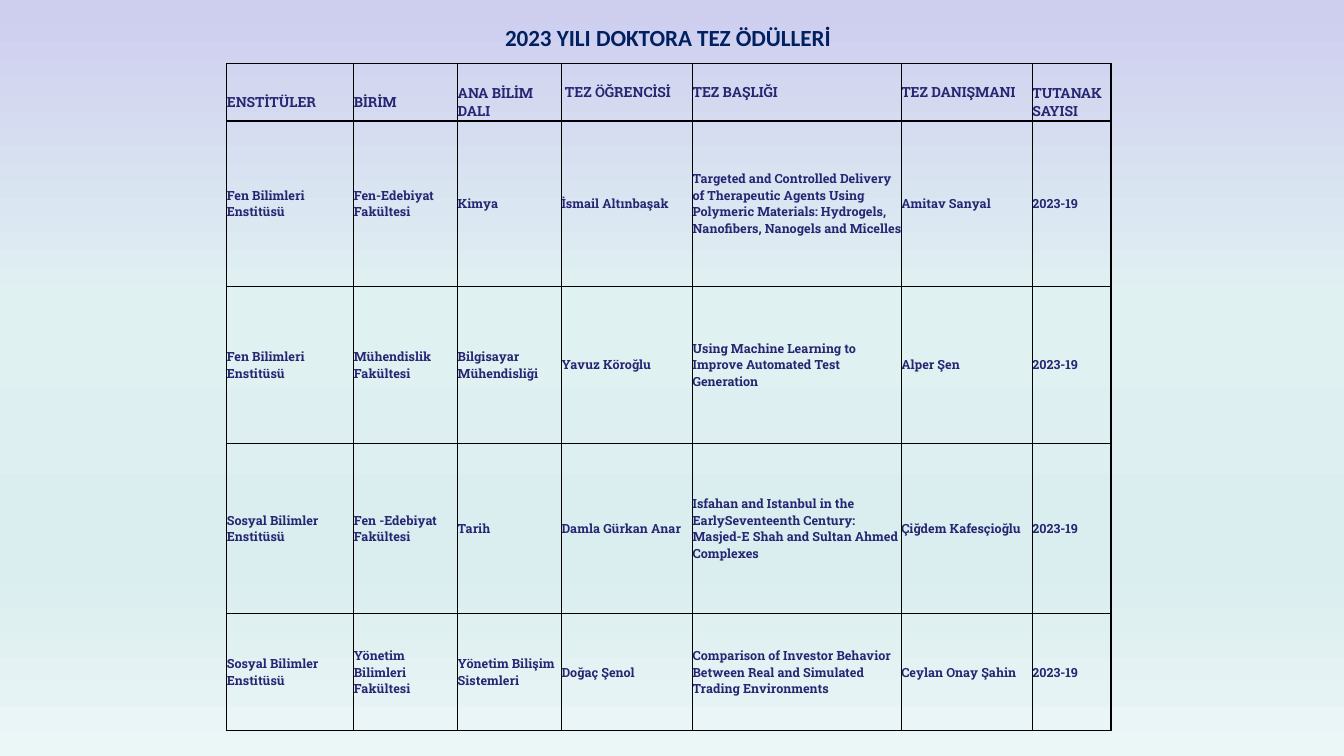
import pptx
import pptx.util
import pptx.dml.color
import pptx.enum.text
import pptx.oxml
import pptx.oxml.ns
from lxml import etree

Inches, Pt = pptx.util.Inches, pptx.util.Pt
RGBColor = pptx.dml.color.RGBColor
qn = pptx.oxml.ns.qn

TITLE = "2023 YILI DOKTORA TEZ ÖDÜLLERİ"
HEADERS = ("ENSTİTÜLER", "BİRİM", "ANA BİLİM DALI", " TEZ ÖĞRENCİSİ",
           "TEZ BAŞLIĞI", "TEZ DANIŞMANI", "TUTANAK SAYISI")
AWARDS = [
    ("Fen Bilimleri Enstitüsü", "Fen-Edebiyat Fakültesi", "Kimya", "İsmail Altınbaşak",
     "Targeted and Controlled Delivery of Therapeutic Agents Using Polymeric Materials: "
     "Hydrogels, Nanofibers, Nanogels and Micelles",
     "Amitav Sanyal", "2023-19"),
    ("Fen Bilimleri Enstitüsü", "Mühendislik Fakültesi", "Bilgisayar Mühendisliği",
     "Yavuz Köroğlu", "Using Machine Learning to Improve Automated Test Generation",
     "Alper Şen", "2023-19"),
    ("Sosyal Bilimler Enstitüsü", "Fen -Edebiyat Fakültesi", "Tarih", "Damla Gürkan Anar",
     "Isfahan and Istanbul in the EarlySeventeenth Century: "
     "Masjed-E Shah and Sultan Ahmed Complexes",
     "Çiğdem Kafesçioğlu", "2023-19"),
    ("Sosyal Bilimler Enstitüsü", "Yönetim Bilimleri Fakültesi", "Yönetim Bilişim Sistemleri",
     "Doğaç Şenol",
     "Comparison of Investor Behavior Between Real and Simulated Trading Environments",
     "Ceylan Onay Şahin", "2023-19"),
]
LOWERED_HEADERS = (0, 1, 2, 6)

COLUMN_WIDTHS = (1.26, 1.03, 1.03, 1.3, 2.07, 1.3, 0.78)
ROW_HEIGHTS = (0.57, 1.64, 1.56, 1.69, 1.16)
TABLE_LEFT, TABLE_TOP = 2.25, 0.63
HEADER_LINE = 0.19

NAVY = RGBColor(0x00, 0x20, 0x60)
INDIGO = RGBColor(0x26, 0x26, 0x73)
BLACK = RGBColor(0, 0, 0)
BACKDROP = ((1, RGBColor(0xCE, 0xCE, 0xEF)), (40, RGBColor(0xE0, 0xF1, 0xF2)),
            (74, RGBColor(0xDA, 0xED, 0xEF)), (100, RGBColor(0xEB, 0xF6, 0xF7)))


def paint_background(page, stops):
    fill = page.background.fill
    fill.gradient()
    fill.gradient_angle = 270
    stop_list = page.element.find(".//" + qn("a:gsLst"))
    for old_stop in list(stop_list):
        stop_list.remove(old_stop)
    for percent, color in stops:
        stop = etree.SubElement(stop_list, qn("a:gs"), pos=str(percent * 1000))
        etree.SubElement(stop, qn("a:srgbClr"), val=str(color))


def write(frame, text, *, size, font, color, align=None):
    frame.word_wrap = True
    para = frame.paragraphs[0]
    para.alignment = align
    span = para.add_run()
    span.text = text
    span.font.size = Pt(size)
    span.font.name = font
    span.font.bold = True
    span.font.color.rgb = color


def outline(cell, color, width):
    """Draw all four cell borders; they must precede the fill in the XML."""
    properties = cell._tc.get_or_add_tcPr()
    for place, side in enumerate(("lnL", "lnR", "lnT", "lnB")):
        line = pptx.oxml.parse_xml(
            f'<a:{side} {pptx.oxml.ns.nsdecls("a")} w="{Pt(width)}"><a:solidFill>'
            f'<a:srgbClr val="{color}"/></a:solidFill></a:{side}>')
        properties.insert(place, line)


def add_title(page):
    title = page.shapes.title
    title.left, title.top = Inches(2.45), Inches(0.24)
    title.width, title.height = Inches(8.35), Inches(0.39)
    title.element.set("useBgFill", "1")
    frame = title.text_frame
    frame.auto_size = pptx.enum.text.MSO_AUTO_SIZE.NONE
    frame.vertical_anchor = pptx.enum.text.MSO_ANCHOR.MIDDLE
    frame.margin_top, frame.margin_bottom = 0, Inches(0.13)
    write(frame, TITLE, size=16.5, font="Calibri", color=NAVY,
          align=pptx.enum.text.PP_ALIGN.CENTER)


def add_awards(page):
    rows = [HEADERS] + AWARDS
    table = page.shapes.add_table(
        len(rows), len(HEADERS), Inches(TABLE_LEFT), Inches(TABLE_TOP),
        Inches(sum(COLUMN_WIDTHS)), Inches(sum(ROW_HEIGHTS))).table
    table.horz_banding = False
    for column, width in zip(table.columns, COLUMN_WIDTHS):
        column.width = Inches(width)
    for row, height in zip(table.rows, ROW_HEIGHTS):
        row.height = Inches(height)
    for r, texts in enumerate(rows):
        for c, text in enumerate(texts):
            cell = table.cell(r, c)
            lowered = r == 0 and c in LOWERED_HEADERS
            cell.margin_left = cell.margin_right = 0
            cell.margin_top = Inches(HEADER_LINE if lowered else 0)
            cell.margin_bottom = 0
            cell.vertical_anchor = pptx.enum.text.MSO_ANCHOR.MIDDLE
            cell.fill.background()
            outline(cell, BLACK, 1)
            write(cell.text_frame, text, size=9 if r else 10,
                  font="Roboto Slab", color=INDIGO)


def main():
    deck = pptx.Presentation()
    deck.slide_width, deck.slide_height = Inches(13.33), Inches(7.5)
    page = deck.slides.add_slide(deck.slide_layouts[5])
    paint_background(page, BACKDROP)
    add_title(page)
    add_awards(page)
    deck.save("out.pptx")


if __name__ == "__main__":
    main()
